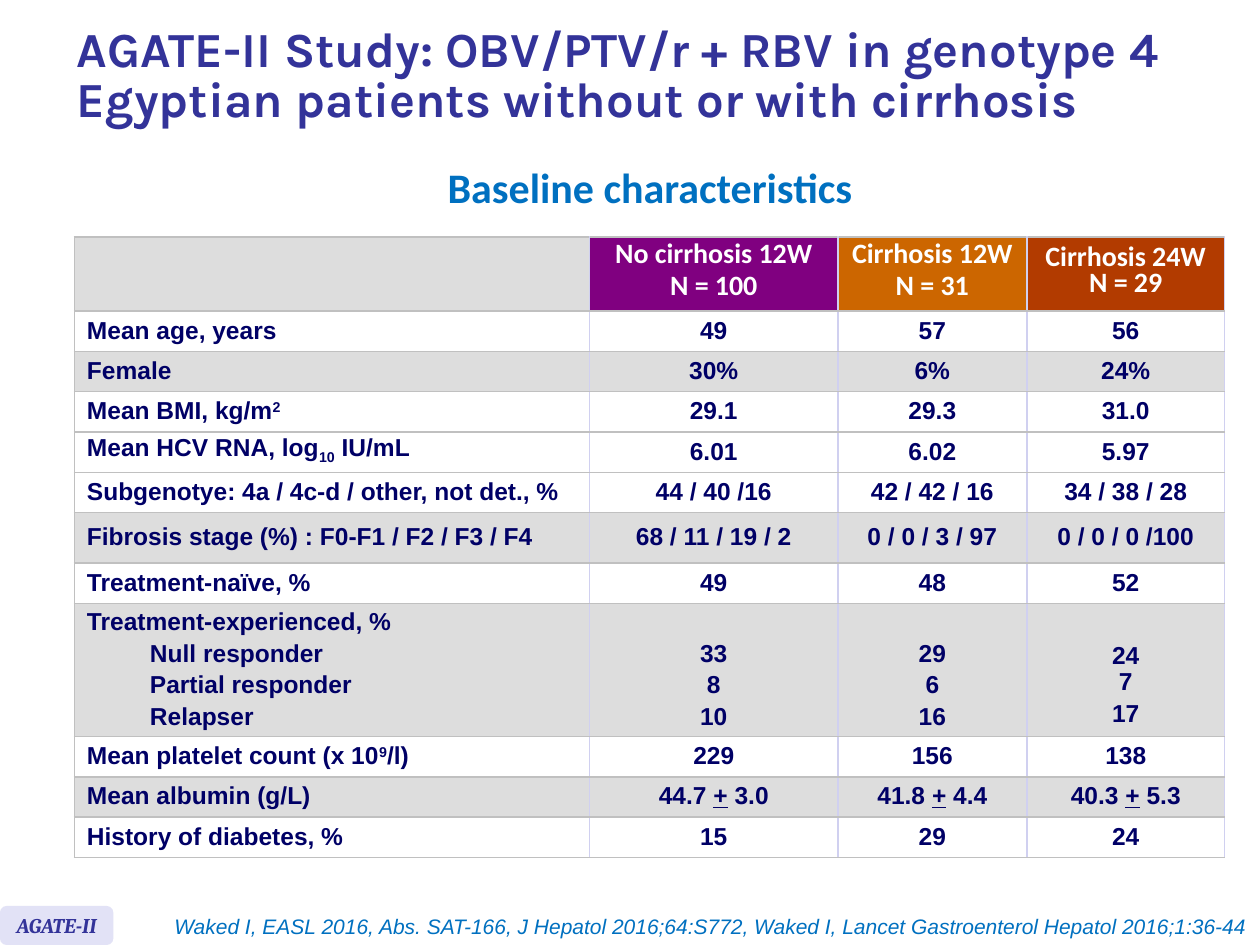
import pptx
import pptx.dml.color
import pptx.enum.shapes
import pptx.enum.text
import pptx.oxml
import pptx.oxml.ns
import pptx.util
from pptx.util import Inches

COLORS = {
    "title": "333399", "accent": "0070C0", "body": "000066", "white": "FFFFFF",
    "band": "DDDDDD", "tag": "E2E2F6", "rule": "C0C0C0", "divider": "D0D0F0",
    "no_cirrhosis": "800080", "cirrhosis_12w": "CC6600", "cirrhosis_24w": "B23B00",
}
ALIGN = pptx.enum.text.PP_ALIGN
MIDDLE = pptx.enum.text.MSO_ANCHOR.MIDDLE


def rgb(name):
    return pptx.dml.color.RGBColor.from_string(COLORS[name])


def add_text(para, text, font, size, color, bold=True, italic=False):
    """Add runs split at "|"; a leading ^, ~ or = raises, lowers or underlines."""
    for number, line in enumerate(text.split("\n")):
        if number:
            para.add_line_break()
        for piece in line.split("|"):
            mark = piece[0] if piece[0] in "^~=" else ""
            span = para.add_run()
            span.text = piece[len(mark):]
            span.font.name = font
            span.font.size = pptx.util.Pt(size)
            span.font.bold = bold
            span.font.italic = italic
            span.font.color.rgb = rgb(color)
            if mark == "=":
                span.font.underline = True
            elif mark:
                span.font._element.set("baseline", "30000" if mark == "^" else "-25000")


deck = pptx.Presentation()
deck.slide_width = Inches(10)
deck.slide_height = Inches(7.5)
page = deck.slides.add_slide(deck.slide_layouts[5])

# Title
title = page.shapes.title
title.left, title.top = Inches(0.51), Inches(0.08)
title.width, title.height = Inches(9.13), Inches(1.07)
title.text_frame.vertical_anchor = MIDDLE
para = title.text_frame.paragraphs[0]
para.alignment = ALIGN.LEFT
para.line_spacing = 0.85
add_text(para, "AGATE-II Study: OBV/PTV/r + RBV in genotype 4 "
         "Egyptian patients without or with cirrhosis", "Karla", 28, "title")

# Baseline table: each cell is a list of paragraphs
rows = [
    [[], ["No cirrhosis 12W", "N = 100"], ["Cirrhosis 12W", "N = 31"],
     ["Cirrhosis 24W\nN = 29"]],
    [["Mean age, years"], ["49"], ["57"], ["56"]],
    [["Female"], ["30%"], ["6%"], ["24%"]],
    [["Mean BMI, kg/m|^2"], ["29.1"], ["29.3"], ["31.0"]],
    [["Mean HCV RNA, log|~10| IU/mL"], ["6.01"], ["6.02"], ["5.97"]],
    [["Subgenotye: 4a / 4c-d / other, not det., %"],
     ["44 / 40 /16"], ["42 / 42 / 16"], ["34 / 38 / 28"]],
    [["Fibrosis stage (%) : F0-F1 / F2 / F3 / F4"],
     ["68 / 11 / 19 / 2"], ["0 / 0 / 3 / 97"], ["0 / 0 / 0 /100"]],
    [["Treatment-naïve, %"], ["49"], ["48"], ["52"]],
    [["Treatment-experienced, %", "Null responder", "Partial responder", "Relapser"],
     ["33", "8", "10"], ["29", "6", "16"], ["24\n7", "17"]],
    [["Mean platelet count (x 10|^9|/l)"], ["229"], ["156"], ["138"]],
    [["Mean albumin (g/L)"], ["44.7 |=+| 3.0"], ["41.8 |=+| 4.4"], ["40.3 |=+| 5.3"]],
    [["History of diabetes, %"], ["15"], ["29"], ["24"]],
]
header_fills = ["band", "no_cirrhosis", "cirrhosis_12w", "cirrhosis_24w"]
banded_rows = {2, 6, 8, 10}
responder_row = 8
row_heights = {0: 0.59, 6: 0.4, responder_row: 1.03}

table = page.shapes.add_table(len(rows), 4, Inches(0.59), Inches(1.88),
                              Inches(9.13), Inches(4.9)).table
table.first_row = False
table.horz_banding = False
for column, width in zip(table.columns, [4.09, 1.97, 1.5, 1.57]):
    column.width = Inches(width)

for row_index, row in enumerate(rows):
    table.rows[row_index].height = Inches(row_heights.get(row_index, 0.32))
    for column_index, lines in enumerate(row):
        cell = table.cell(row_index, column_index)
        cell.vertical_anchor = MIDDLE
        if row_index == responder_row and column_index:
            cell.margin_top = Inches(0.3)  # leaves the heading line free
        if row_index == 0:
            fill, font, size, color = header_fills[column_index], "Calibri", 16, "white"
        else:
            fill = "band" if row_index in banded_rows else "white"
            font, size, color = "Arial", 14, "body"
        cell.fill.solid()
        cell.fill.fore_color.rgb = rgb(fill)

        for line_index, line in enumerate(lines):
            para = cell.text_frame.paragraphs[0]
            if line_index:
                para = cell.text_frame.add_paragraph()
                para.space_before = pptx.util.Pt(3)
                if column_index == 0:
                    para._p.get_or_add_pPr().set("marL", str(Inches(0.5)))
            para.alignment = ALIGN.CENTER if column_index else ALIGN.LEFT
            para.line_spacing = pptx.util.Pt(15)
            add_text(para, line, font, size, color)

        left = "divider" if column_index else "rule"
        sides = [("lnL", left), ("lnR", "divider"), ("lnT", "rule"), ("lnB", "rule")]
        for position, (side, edge) in enumerate(sides):
            border = pptx.oxml.parse_xml(
                f'<a:{side} {pptx.oxml.ns.nsdecls("a")} w="12700"><a:solidFill>'
                f'<a:srgbClr val="{COLORS[edge]}"/></a:solidFill></a:{side}>')
            cell._tc.get_or_add_tcPr().insert(position, border)

# Table heading
box = page.shapes.add_textbox(Inches(3.43), Inches(1.42), Inches(3.46), Inches(0.35))
box.text_frame.word_wrap = False
para = box.text_frame.paragraphs[0]
para.alignment = ALIGN.CENTER
para.line_spacing = pptx.util.Pt(15.2)
add_text(para, "Baseline characteristics", "Calibri", 24, "accent")

# Study tag
tag = page.shapes.add_shape(pptx.enum.shapes.MSO_SHAPE.ROUNDED_RECTANGLE,
                            Inches(0), Inches(7.19), Inches(0.9), Inches(0.31))
tag.shadow.inherit = False
tag.fill.solid()
tag.fill.fore_color.rgb = rgb("tag")
tag.line.fill.background()
tag.text_frame.word_wrap = False
tag.text_frame.vertical_anchor = MIDDLE
para = tag.text_frame.paragraphs[0]
para.alignment = ALIGN.CENTER
add_text(para, "AGATE-II", "Cambria", 12, "title", italic=True)

# Citation
box = page.shapes.add_textbox(Inches(1.06), Inches(7.2), Inches(8.94), Inches(0.3))
box.text_frame.word_wrap = False
para = box.text_frame.paragraphs[0]
para.alignment = ALIGN.RIGHT
add_text(para, "Waked I, EASL 2016, Abs. SAT-166, J Hepatol 2016;64:S772, "
         "Waked I, Lancet Gastroenterol Hepatol 2016;1:36-44",
         "Arial", 12, "accent", bold=False, italic=True)

deck.save("out.pptx")
